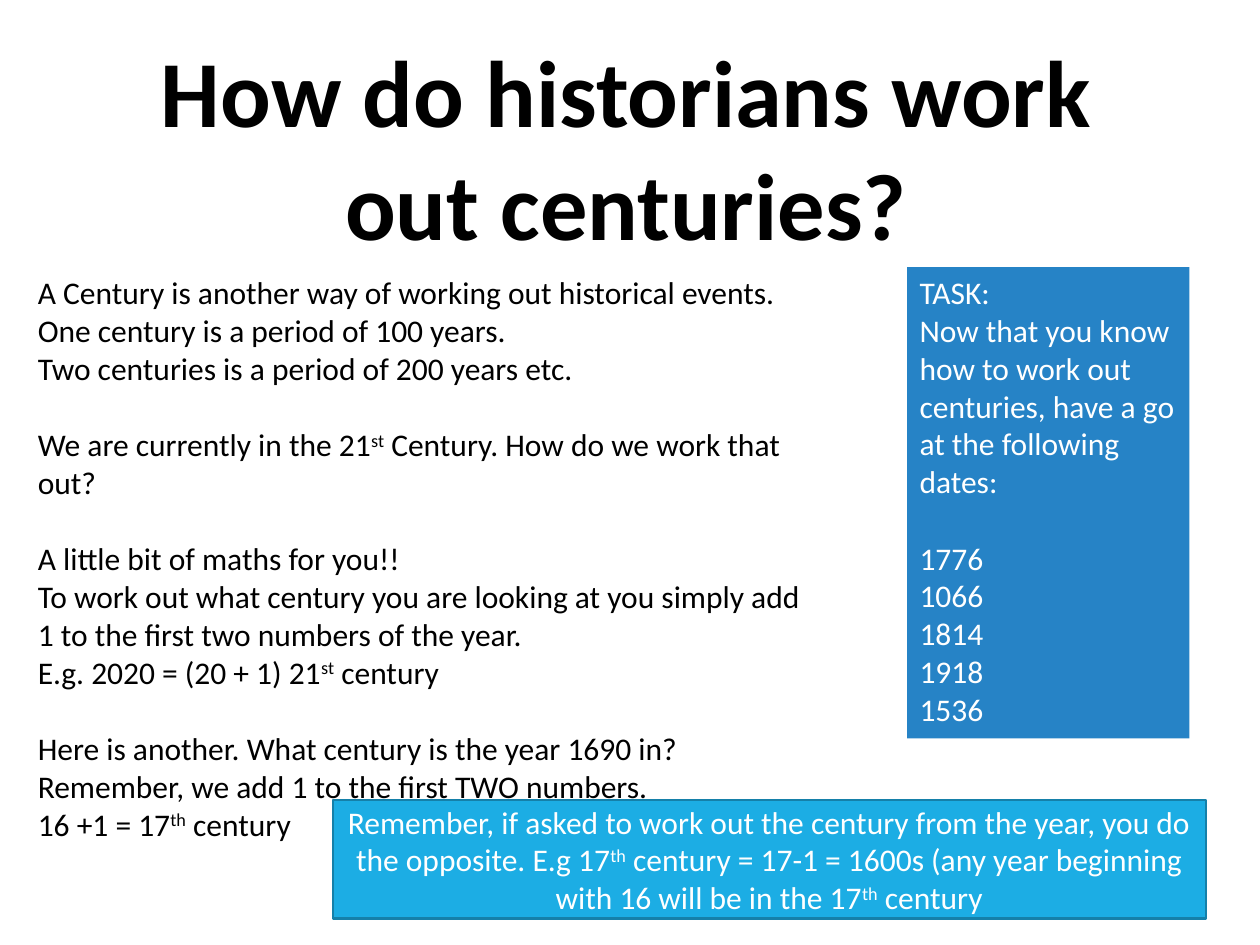
import lxml.etree
import pptx
import pptx.dml.color
import pptx.enum.shapes
import pptx.enum.text
import pptx.oxml
import pptx.oxml.ns
import pptx.util
from pptx.util import Inches

COLORS = {"text": "000000", "light": "FFFFFF", "task": "2683C6",
          "reminder": "1CADE4", "reminder_line": "1580A9"}
ALIGN = pptx.enum.text.PP_ALIGN
ANCHOR = pptx.enum.text.MSO_ANCHOR
BLANK_LINE = 22  # height in points of one 18 pt line


def color(name):
    return pptx.dml.color.RGBColor.from_string(COLORS[name])


def write(shape, groups, color_name, size=18, align=ALIGN.LEFT, bold=False):
    """Write groups of paragraphs a line apart; text between ^ marks is superscript."""
    frame = shape.text_frame
    frame.word_wrap = True
    frame.auto_size = pptx.enum.text.MSO_AUTO_SIZE.NONE
    frame.vertical_anchor = ANCHOR.TOP
    frame.text = "\n".join(line for group in groups for line in group)
    group_starts = {sum(map(len, groups[:i])) for i in range(1, len(groups))}
    for index, paragraph in enumerate(frame.paragraphs):
        pieces = paragraph.text.split("^")
        paragraph.clear()
        paragraph.alignment = align
        paragraph.space_before = pptx.util.Pt(BLANK_LINE if index in group_starts else 0)
        for position, piece in enumerate(pieces):
            run = paragraph.add_run()
            run.text = piece
            run.font.name = "Calibri"
            run.font.size = pptx.util.Pt(size)
            run.font.bold = bold
            run.font.color.rgb = color(color_name)
            if position % 2:
                run.font._element.set("baseline", "30000")


presentation = pptx.Presentation()
presentation.slide_width = Inches(10)
presentation.slide_height = Inches(7.5)
slide = presentation.slides.add_slide(presentation.slide_layouts[1])

# Title with a soft text shadow
title = slide.shapes.title
title.left, title.top, title.width, title.height = map(Inches, (0.56, 0.21, 8.82, 1.92))
write(title, [["How do historians work out centuries?"]], "text", 54, ALIGN.CENTER, True)
shadow = pptx.oxml.parse_xml(
    f'<a:effectLst {pptx.oxml.ns.nsdecls("a")}>'
    '<a:outerShdw blurRad="38100" dist="38100" dir="2700000" algn="tl">'
    '<a:srgbClr val="000000"><a:alpha val="43000"/></a:srgbClr>'
    '</a:outerShdw></a:effectLst>')
title_font = title.text_frame.paragraphs[0].runs[0].font
title_font._element.find(pptx.oxml.ns.qn("a:solidFill")).addnext(shadow)

# Explanation, without bullets
body = slide.placeholders[1]
body.left, body.top, body.width, body.height = map(Inches, (0.2, 2.12, 6.3, 4.64))
write(body, [
    ["A Century is another way of working out historical events. "
     "One century is a period of 100 years.",
     "Two centuries is a period of 200 years etc."],
    ["We are currently in the 21^st^ Century. How do we work that out?"],
    ["A little bit of maths for you!!",
     "To work out what century you are looking at you simply add 1 "
     "to the first two numbers of the year.",
     "E.g. 2020 = (20 + 1) 21^st^ century"],
    ["Here is another. What century is the year 1690 in?",
     "Remember, we add 1 to the first TWO numbers.",
     "16 +1 = 17^th^ century"],
], "text")
for paragraph in body.text_frame.paragraphs:
    properties = paragraph._p.get_or_add_pPr()
    properties.set("marL", "0")
    properties.set("indent", "0")
    lxml.etree.SubElement(properties, pptx.oxml.ns.qn("a:buNone"))

# Task box
RECTANGLE = pptx.enum.shapes.MSO_SHAPE.RECTANGLE
task = slide.shapes.add_shape(RECTANGLE, Inches(7.2), Inches(2.12), Inches(2.24), Inches(3.74))
task.shadow.inherit = False
task.fill.solid()
task.fill.fore_color.rgb = color("task")
task.line.fill.background()
write(task, [
    ["TASK:",
     "Now that you know how to work out centuries, have a go at the following dates:"],
    ["1776", "1066", "1814", "1918", "1536"],
], "light")

# Reminder box
reminder = slide.shapes.add_shape(RECTANGLE, Inches(2.64), Inches(6.35), Inches(6.93), Inches(0.94))
reminder.shadow.inherit = False
reminder.fill.solid()
reminder.fill.fore_color.rgb = color("reminder")
reminder.line.color.rgb = color("reminder_line")
reminder.line.width = pptx.util.Pt(1.25)
write(reminder, [[
    "Remember, if asked to work out the century from the year, you do the opposite. "
    "E.g 17^th^ century = 17-1 = 1600s (any year beginning with 16 will be in the "
    "17^th^ century"]], "light", align=ALIGN.CENTER)
reminder.text_frame.vertical_anchor = ANCHOR.MIDDLE

presentation.save("out.pptx")
